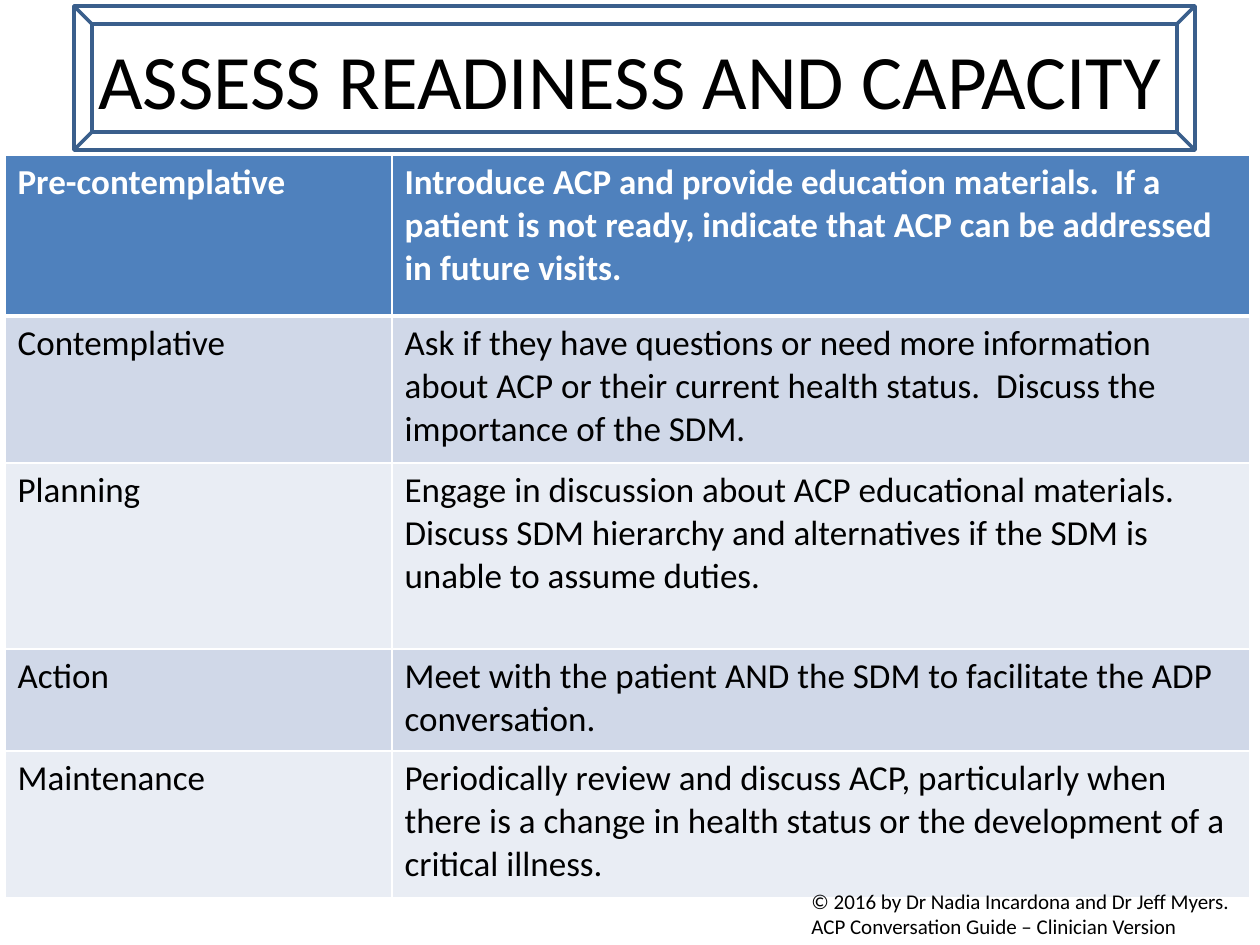
"""Build the readiness and capacity slide."""
from lxml import etree
from pptx import Presentation, util as u
from pptx.dml.color import RGBColor
from pptx.enum import shapes, text
from pptx.oxml import ns

WHITE = RGBColor(0xFF, 0xFF, 0xFF)
BLACK = RGBColor(0, 0, 0)
HEADER = RGBColor(0x4F, 0x81, 0xBD)
BANDS = RGBColor(0xE9, 0xED, 0xF4), RGBColor(0xD0, 0xD8, 0xE8)
FRAME = RGBColor(0x3A, 0x5F, 0x8C)

COLUMN_WIDTHS = 387, 858
ROW_HEIGHTS = 161, 147, 186, 102, 147
STAGES = [
    ("Pre-contemplative", "Introduce ACP and provide education materials.  If a patient is not ready, "
     "indicate that ACP can be addressed in future visits."),
    ("Contemplative", "Ask if they have questions or need more information about ACP or their "
     "current health status.  Discuss the importance of the SDM."),
    ("Planning", "Engage in discussion about ACP educational materials.  Discuss SDM hierarchy "
     "and alternatives if the SDM is unable to assume duties."),
    ("Action", "Meet with the patient AND the SDM to facilitate the ADP conversation."),
    ("Maintenance", "Periodically review and discuss ACP, particularly when there is a change in "
     "health status or the development of a critical illness."),
]


class SlideBuilder:
    """Hold the style and the current slide."""

    font_name = "Calibri"
    scale = u.Inches(1) / 126

    def __init__(self, slide):
        self.slide = slide

    def px(self, *lengths):
        return [u.Emu(round(length * self.scale)) for length in lengths]

    def style(self, paragraph, size, color=BLACK, bold=False):
        font = paragraph.font
        font.name, font.size, font.bold = self.font_name, u.Pt(size), bold
        font.color.rgb = color

    def text_box(self, box, words, size, align=text.PP_ALIGN.LEFT, anchor=text.MSO_ANCHOR.TOP):
        frame = self.slide.shapes.add_textbox(*self.px(*box)).text_frame
        frame.word_wrap = True
        frame.vertical_anchor = anchor
        paragraph = frame.paragraphs[0]
        paragraph.text = words
        paragraph.alignment = align
        self.style(paragraph, size)

    def bevel(self, box):
        shape = self.slide.shapes.add_shape(shapes.MSO_SHAPE.BEVEL, *self.px(*box))
        shape.shadow.inherit = False
        shape.fill.background()
        shape.line.color.rgb = FRAME
        shape.line.width = u.Pt(2)

    def border(self, cell, side, points):
        line = etree.Element(ns.qn(f"a:{side}"), w=str(u.Pt(points)))
        fill = etree.SubElement(line, ns.qn("a:solidFill"))
        etree.SubElement(fill, ns.qn("a:srgbClr"), val=str(WHITE))
        return line

    def cell(self, cell, words, fill, color, bold, bottom):
        cell.text = words
        self.style(cell.text_frame.paragraphs[0], 20, color, bold)
        cell.fill.solid()
        cell.fill.fore_color.rgb = fill
        properties = cell._tc.get_or_add_tcPr()
        for index, side in enumerate(("lnL", "lnR", "lnT", "lnB")):
            properties.insert(index, self.border(cell, side, bottom if side == "lnB" else 1))

    def table(self, left, top, widths, heights, rows):
        box = self.px(left, top, sum(widths), sum(heights))
        table = self.slide.shapes.add_table(len(rows), len(widths), *box).table
        for column, width in zip(table.columns, self.px(*widths)):
            column.width = width
        for row, height in zip(table.rows, self.px(*heights)):
            row.height = height
        for index, row in enumerate(rows):
            look = (BANDS[index % 2], BLACK, False, 1) if index else (HEADER, WHITE, True, 3)
            for cell, words in zip(table.rows[index].cells, row):
                self.cell(cell, words, *look)


def main():
    presentation = Presentation()
    presentation.slide_width, presentation.slide_height = u.Inches(10), u.Inches(7.5)
    builder = SlideBuilder(presentation.slides.add_slide(presentation.slide_layouts[6]))
    builder.text_box((44, 0, 1173, 158), "ASSESS READINESS AND CAPACITY", 44,
                     text.PP_ALIGN.CENTER, text.MSO_ANCHOR.MIDDLE)
    builder.table(5, 155, COLUMN_WIDTHS, ROW_HEIGHTS, STAGES)
    builder.text_box((799, 882, 461, 63), "© 2016 by Dr Nadia Incardona and Dr Jeff Myers. "
                     "ACP Conversation Guide – Clinician Version", 12)
    builder.bevel((74, 6, 1121, 144))
    presentation.save("out.pptx")


if __name__ == "__main__":
    main()
